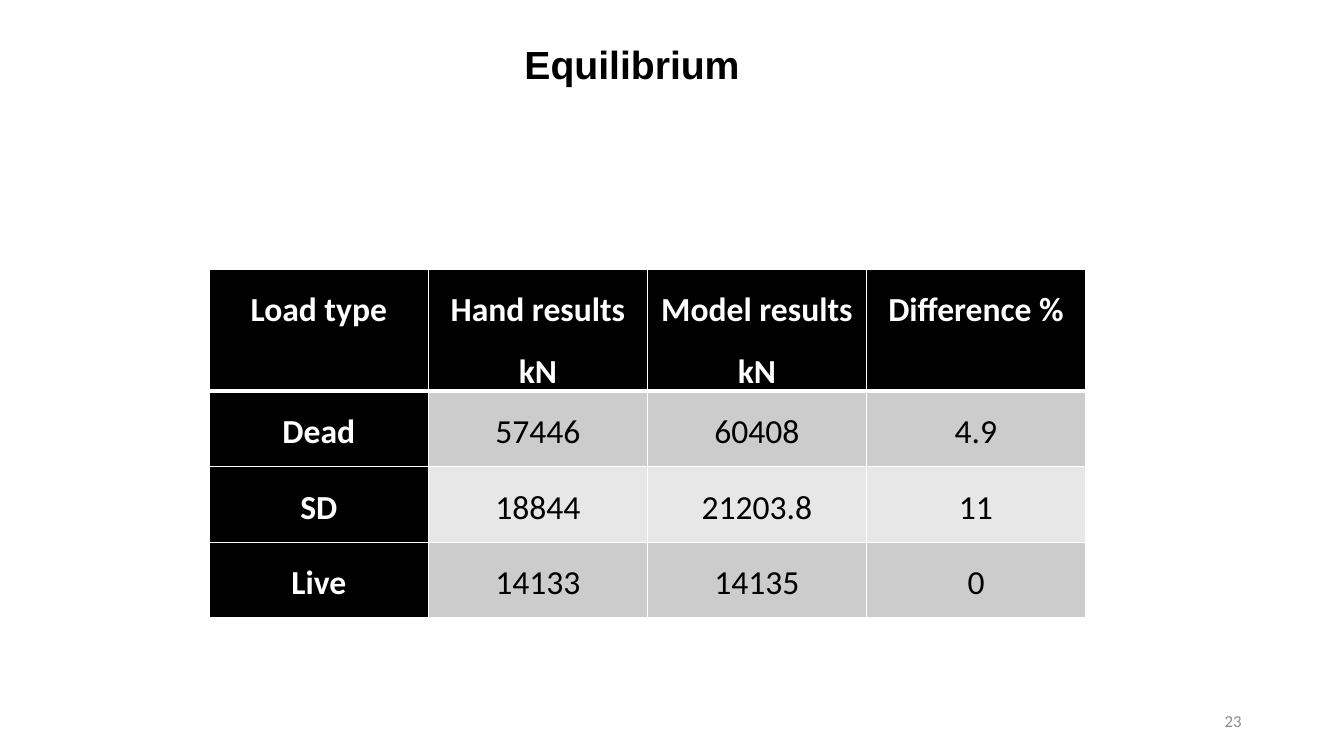
from dataclasses import dataclass

from lxml import etree
from pptx import Presentation
from pptx import util as u
from pptx.dml import color
from pptx.enum import text
from pptx.oxml import ns


@dataclass(frozen=True)
class Theme:
    ink: str = "000000"
    paper: str = "FFFFFF"
    muted: str = "8C8C8C"
    bands: tuple = ("CCCCCC", "E7E7E7")
    heading_font: str = "Arial"
    body_font: str = "Calibri"
    title_size: float = 28
    table_size: float = 24
    number_size: float = 12
    thin_rule: float = 1
    thick_rule: float = 3


THEME = Theme()

LOADS = [
    ["Load type", "Hand results kN", "Model results kN", "Difference %"],
    ["Dead", "57446", "60408", "4.9"],
    ["SD", "18844", "21203.8", "11"],
    ["Live", "14133", "14135", "0"],
]


def write_text(frame, words, ink, align, line_spacing=None, **font_format):
    """Put one formatted paragraph into a text frame."""
    frame.word_wrap = True
    para = frame.paragraphs[0]
    para.alignment = align
    para.line_spacing = line_spacing
    span = para.add_run()
    span.text = words
    for name, value in font_format.items():
        setattr(span.font, name, value)
    span.font.color.rgb = color.RGBColor.from_string(ink)


def add_label(page, box, words, ink, align, anchor, **font_format):
    """Add a text box that fills the given box."""
    frame = page.shapes.add_textbox(*map(u.Pt, box)).text_frame
    frame.vertical_anchor = anchor
    write_text(frame, words, ink, align, **font_format)


def add_border(cell, side, width):
    """Draw one side of a cell in the paper colour."""
    line = etree.SubElement(cell._tc.get_or_add_tcPr(), ns.qn(f"a:ln{side}"), w=str(u.Pt(width)))
    fill = etree.SubElement(line, ns.qn("a:solidFill"))
    etree.SubElement(fill, ns.qn("a:srgbClr"), val=THEME.paper)


def add_load_table(page, box, rows, header_height):
    """Add the table with a dark header row and a dark first column."""
    left, top, width, height = box
    table = page.shapes.add_table(len(rows), len(rows[0]), *map(u.Pt, box)).table
    for column in table.columns:
        column.width = u.Pt(width / len(rows[0]))
    body_height = (height - header_height) / (len(rows) - 1)

    for r, values in enumerate(rows):
        table.rows[r].height = u.Pt(body_height if r else header_height)
        for c, words in enumerate(values):
            cell = table.cell(r, c)
            is_label = r == 0 or c == 0
            cell_format = {
                "margin_left": u.Pt(5), "margin_right": u.Pt(5),
                "margin_top": 0, "margin_bottom": 0,
            }
            for name, value in cell_format.items():
                setattr(cell, name, value)

            # The rule below the header is thicker than the others
            thick_side = {0: "B", 1: "T"}.get(r)
            for side in "LRTB":
                add_border(cell, side, THEME.thick_rule if side == thick_side else THEME.thin_rule)

            cell.fill.solid()
            fill = THEME.ink if is_label else THEME.bands[(r - 1) % 2]
            cell.fill.fore_color.rgb = color.RGBColor.from_string(fill)
            write_text(cell.text_frame, words, THEME.paper if is_label else THEME.ink,
                       text.PP_ALIGN.CENTER, line_spacing=1.5, name=THEME.body_font,
                       size=u.Pt(THEME.table_size), bold=is_label)


def add_equilibrium_page(deck):
    page = deck.slides.add_slide(deck.slide_layouts[6])
    # Title
    add_label(page, (127.5, 25.2, 648, 90), "Equilibrium", THEME.ink,
              text.PP_ALIGN.CENTER, text.MSO_ANCHOR.TOP,
              name=THEME.heading_font, size=u.Pt(THEME.title_size), bold=True)
    # Page number
    add_label(page, (678, 500.5, 216, 28.8), "23", THEME.muted,
              text.PP_ALIGN.RIGHT, text.MSO_ANCHOR.MIDDLE,
              name=THEME.body_font, size=u.Pt(THEME.number_size))
    # Comparison of results
    add_load_table(page, (149.5, 192.5, 626, 249), LOADS, header_height=87)


def main():
    deck = Presentation()
    deck.slide_width, deck.slide_height = u.Pt(960), u.Pt(540)
    add_equilibrium_page(deck)
    deck.save("out.pptx")


if __name__ == "__main__":
    main()
